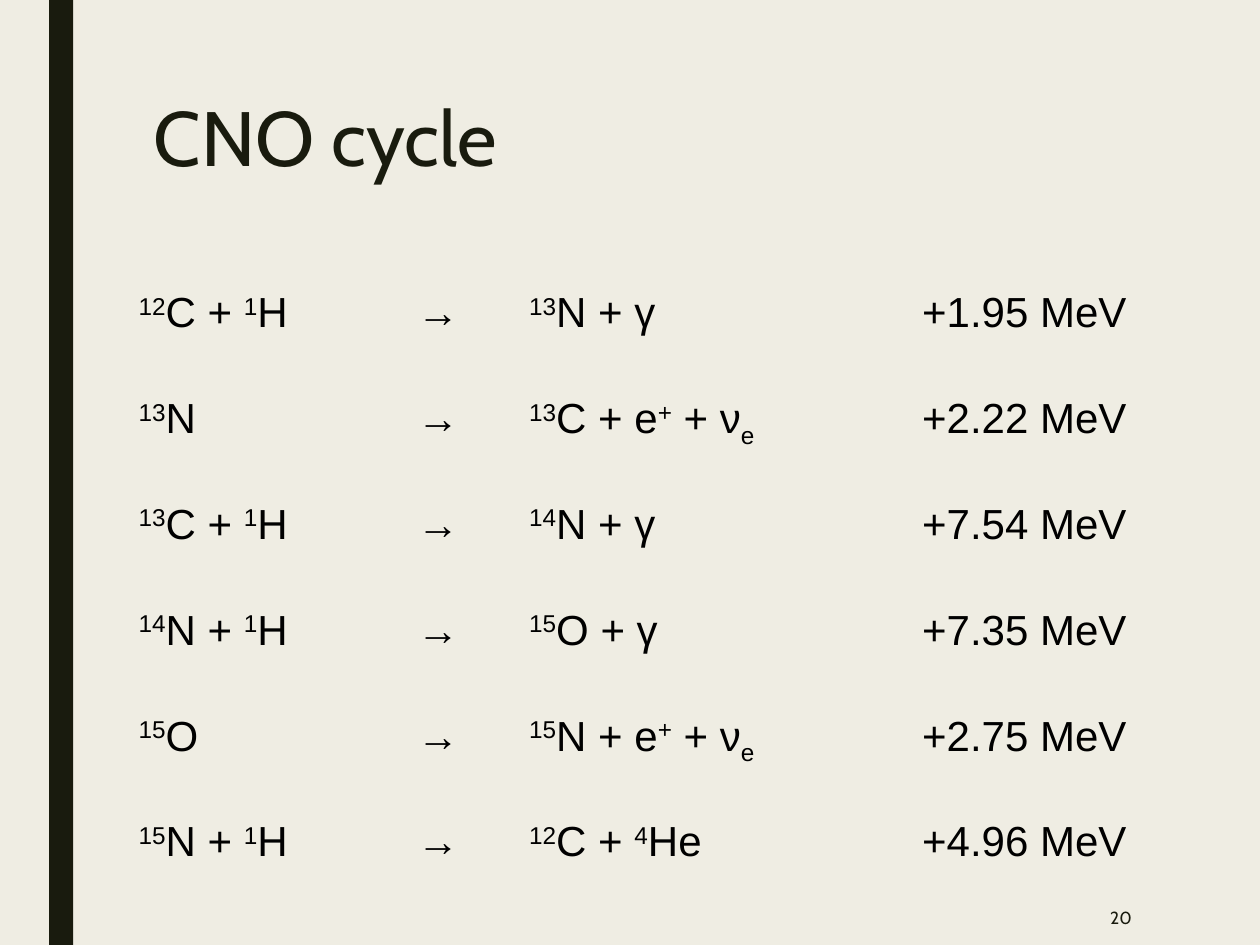
from lxml import etree
from pptx import Presentation
from pptx.dml.color import RGBColor
from pptx.enum.shapes import MSO_SHAPE
from pptx.enum.text import MSO_ANCHOR, PP_ALIGN
from pptx.oxml.ns import qn
from pptx.util import Inches, Pt

CREAM = RGBColor(0xEF, 0xED, 0xE3)
DARK_OLIVE = RGBColor(0x19, 0x1B, 0x0E)
BLACK = RGBColor(0, 0, 0)

NO_STYLE_NO_GRID = "{2D5ABB26-0587-4C30-8999-92F81FD0307C}"
BASELINES = {"^": "30000", "_": "-25000"}
COLUMN_WIDTHS = (2.21, 0.89, 3.12, 2.78)

# Runs are separated by "|"; a leading "^" raises a run and "_" lowers it.
REACTIONS = [
    ("^12|C + |^1|H", "^13|N + γ", "+1.95 MeV"),
    ("^13|N", "^13|C + e|^+| + ν|_e", "+2.22 MeV"),
    ("^13|C + |^1|H", "^14|N + γ", "+7.54 MeV"),
    ("^14|N + |^1|H", "^15|O + γ", "+7.35 MeV"),
    ("^15|O", "^15|N + e|^+| + ν|_e", "+2.75 MeV"),
    ("^15|N + |^1|H", "^12|C + |^4|He", "+4.96 MeV"),
]


def add_run(paragraph, text, font_name, size, color):
    run = paragraph.add_run()
    run.text = text
    run.font.name = font_name
    run.font.size = Pt(size)
    run.font.color.rgb = color
    return run


def add_formula(paragraph, formula):
    """Write a formula run by run, raising and lowering the marked ones."""
    for piece in formula.split("|"):
        baseline = BASELINES.get(piece[0])
        text = piece[1:] if baseline else piece
        run = add_run(paragraph, text, "Arial", 24, BLACK)
        if baseline:
            run.font._element.set("baseline", baseline)


def add_side_bar(slide, left, top, width, height):
    bar = slide.shapes.add_shape(MSO_SHAPE.RECTANGLE, left, top, width, height)
    bar.shadow.inherit = False
    bar.fill.solid()
    bar.fill.fore_color.rgb = DARK_OLIVE
    bar.line.fill.background()


def add_title(slide, left, top, width, height):
    title = slide.shapes.title
    title.left, title.top, title.width, title.height = left, top, width, height
    frame = title.text_frame
    frame.word_wrap = True
    frame.vertical_anchor = MSO_ANCHOR.TOP
    paragraph = frame.paragraphs[0]
    paragraph.alignment = PP_ALIGN.LEFT
    paragraph.line_spacing = 0.89
    add_run(paragraph, "CNO cycle", "Cabin", 44, DARK_OLIVE)


def add_reaction_table(slide, left, top, width, height):
    frame = slide.shapes.add_table(len(REACTIONS), len(COLUMN_WIDTHS),
                                   left, top, width, height)
    table = frame.table
    table.first_row = table.horz_banding = False
    properties = table._tbl.tblPr
    style = properties.find(qn("a:tableStyleId"))
    if style is None:
        style = etree.SubElement(properties, qn("a:tableStyleId"))
    style.text = NO_STYLE_NO_GRID
    for column, column_width in zip(table.columns, COLUMN_WIDTHS):
        column.width = Inches(column_width)
    for row, (reactants, products, energy) in zip(table.rows, REACTIONS):
        for cell, formula in zip(row.cells, (reactants, "→", products, energy)):
            cell.fill.background()
            add_formula(cell.text_frame.paragraphs[0], formula)


def add_page_number(slide, left, top, width, height):
    frame = slide.shapes.add_textbox(left, top, width, height).text_frame
    frame.word_wrap = True
    frame.vertical_anchor = MSO_ANCHOR.MIDDLE
    paragraph = frame.paragraphs[0]
    paragraph.alignment = PP_ALIGN.RIGHT
    add_run(paragraph, "20", "Cabin", 10, DARK_OLIVE)


def main():
    presentation = Presentation()
    presentation.slide_width = Inches(10)
    presentation.slide_height = Inches(7.5)
    slide = presentation.slides.add_slide(presentation.slide_layouts[5])
    slide.background.fill.solid()
    slide.background.fill.fore_color.rgb = CREAM

    add_side_bar(slide, Inches(0.39), 0, Inches(0.19), Inches(7.5))
    add_title(slide, Inches(1.12), Inches(0.75), Inches(7.88), Inches(1.62))
    add_reaction_table(slide, Inches(1), Inches(2.25), Inches(9), Inches(5.04))
    add_page_number(slide, Inches(7.77), Inches(7.06), Inches(1.31), Inches(0.44))
    presentation.save("out.pptx")


if __name__ == "__main__":
    main()
